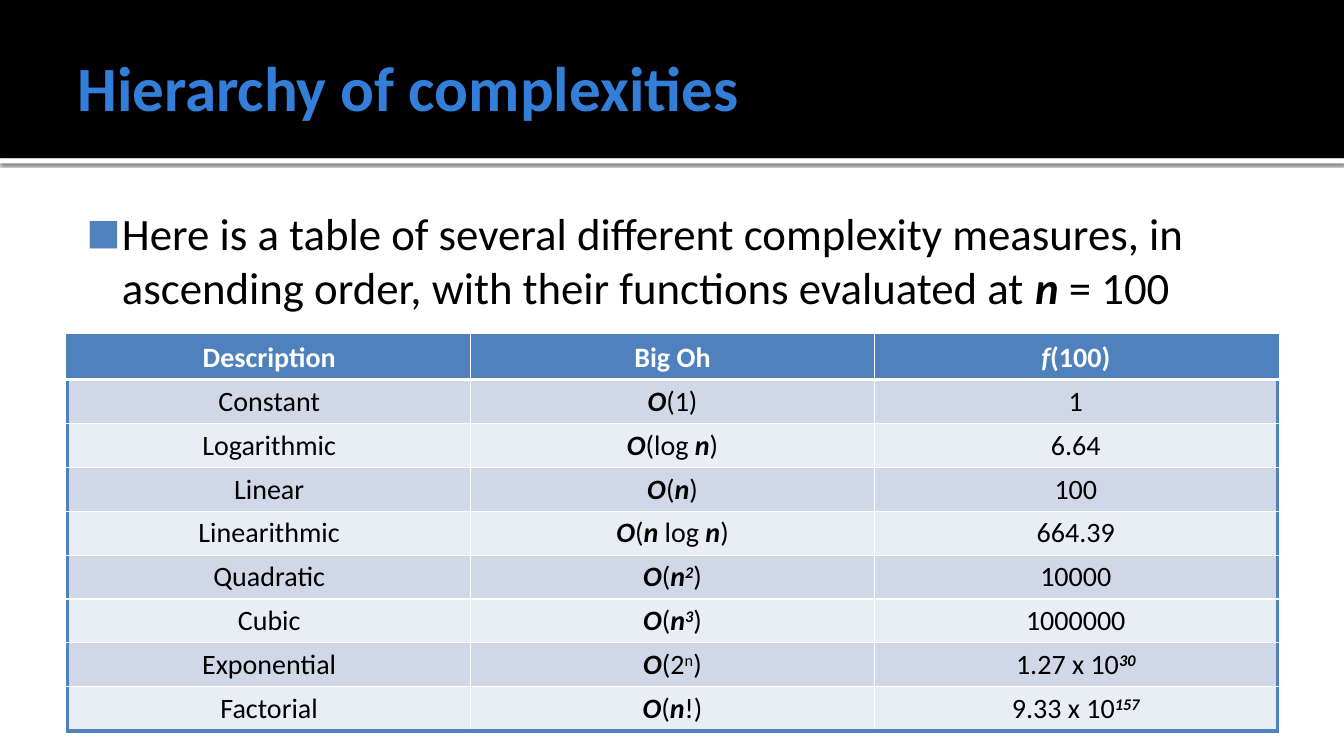
from dataclasses import dataclass

from lxml import etree
from pptx import Presentation
from pptx.dml.color import RGBColor
from pptx.enum.shapes import MSO_SHAPE
from pptx.enum.text import MSO_ANCHOR, PP_ALIGN
from pptx.oxml.ns import qn
from pptx.util import Inches, Pt

RECTANGLE = MSO_SHAPE.RECTANGLE
MIDDLE = MSO_ANCHOR.MIDDLE
CENTER = PP_ALIGN.CENTER

# *...* marks bold italic, ^...^ marks superscript
TITLE = "Hierarchy of complexities"
INTRO = ("Here is a table of several different complexity measures, in "
         "ascending order, with their functions evaluated at *n* = 100")
COMPLEXITIES = [
    ("Description", "Big Oh", "*f*(100)"),
    ("Constant", "*O*(1)", "1"),
    ("Logarithmic", "*O*(log *n*)", "6.64"),
    ("Linear", "*O*(*n*)", "100"),
    ("Linearithmic", "*O*(*n* log *n*)", "664.39"),
    ("Quadratic", "*O*(*n*^2^)", "10000"),
    ("Cubic", "*O*(*n*^3^)", "1000000"),
    ("Exponential", "*O*(2^*n*^)", "1.27 x 10^30^"),
    ("Factorial", "*O*(*n*!)", "9.33 x 10^157^"),
]


@dataclass(frozen=True)
class Theme:
    font: str = "Calibri"
    title_size: int = 45
    body_size: int = 32
    table_size: int = 20
    black: str = "000000"
    white: str = "FFFFFF"
    title: str = "337ED9"
    accent: str = "4F81BD"
    bands: tuple = ("E9EDF4", "D0D8E8")
    thin: int = 1
    thick: int = 3


THEME = Theme()
WIDTH, HEIGHT = 13.33, 7.5
MARGIN = 0.67
CONTENT_WIDTH = 12
HEADER_HEIGHT = 1.57
STRIP_HEIGHT = 0.05
TABLE_TOP, TABLE_HEIGHT = 3.33, 3.92


def add_xml(parent, tag, **attributes):
    return etree.SubElement(parent, qn(tag), attributes)


def add_color(parent, color):
    return add_xml(add_xml(parent, "a:solidFill"), "a:srgbClr", val=color)


def add_band(slide, top, height, color):
    band = slide.shapes.add_shape(
        RECTANGLE, 0, Inches(top), Inches(WIDTH), Inches(height))
    band.shadow.inherit = False
    band.fill.solid()
    band.fill.fore_color.rgb = RGBColor.from_string(color)
    band.line.fill.background()
    return band


def add_shadow(shape):
    effects = shape._element.spPr.find(qn("a:effectLst"))
    shadow = add_xml(effects, "a:outerShdw", blurRad=str(Pt(2.5)),
                     dist=str(Pt(0.8)), dir="5400000", rotWithShape="0")
    color = add_xml(shadow, "a:srgbClr", val=THEME.black)
    add_xml(color, "a:alpha", val="60000")


def write_marked(paragraph, text, size, color, bold=False):
    """Turn * and ^ marks into bold italic and superscript runs."""
    emphasis = superscript = False
    for index, part in enumerate(text.replace("^", "*^*").split("*")):
        if part == "^":
            superscript = not superscript
            emphasis = not emphasis
        emphasis = emphasis if index == 0 else not emphasis
        if part in ("", "^"):
            continue
        run = paragraph.add_run()
        run.text = part
        run.font.name = THEME.font
        run.font.size = Pt(size)
        run.font.color.rgb = RGBColor.from_string(color)
        run.font.bold = bold or emphasis
        run.font.italic = emphasis
        if superscript:
            run.font._element.set("baseline", "30000")


def add_text(slide, top, height, insets):
    box = slide.shapes.add_textbox(
        Inches(MARGIN), Inches(top), Inches(CONTENT_WIDTH), Inches(height))
    frame = box.text_frame
    frame.word_wrap = True
    (frame.margin_left, frame.margin_top,
     frame.margin_right, frame.margin_bottom) = map(Inches, insets)
    return frame


def add_bullet(paragraph):
    properties = paragraph._p.get_or_add_pPr()
    properties.set("marL", str(Inches(0.48)))
    properties.set("indent", str(Inches(-0.35)))
    add_xml(add_xml(properties, "a:buClr"), "a:srgbClr", val=THEME.accent)
    add_xml(properties, "a:buSzPct", val="80000")
    add_xml(properties, "a:buFont", typeface=THEME.font)
    add_xml(properties, "a:buChar", char="■")


def set_borders(cell, borders):
    """Put the (color, width) of each side ahead of the cell's fill."""
    properties = cell._tc.get_or_add_tcPr()
    for position, (side, (color, width)) in enumerate(borders.items()):
        line = add_xml(properties, f"a:ln{side}", w=str(Pt(width)))
        add_color(line, color)
        properties.insert(position, line)


def add_complexity_table(slide):
    row_count, column_count = len(COMPLEXITIES), len(COMPLEXITIES[0])
    table = slide.shapes.add_table(
        row_count, column_count, Inches(MARGIN), Inches(TABLE_TOP),
        Inches(CONTENT_WIDTH), Inches(TABLE_HEIGHT)).table
    outer = (THEME.accent, THEME.thick)
    inner = (THEME.white, THEME.thin)
    rule = (THEME.white, THEME.thick)
    for row, texts in enumerate(COMPLEXITIES):
        header = row == 0
        last_row = row == row_count - 1
        for column, text in enumerate(texts):
            cell = table.cell(row, column)
            cell.fill.solid()
            cell.fill.fore_color.rgb = RGBColor.from_string(
                THEME.accent if header else THEME.bands[row % 2])
            paragraph = cell.text_frame.paragraphs[0]
            paragraph.alignment = CENTER
            write_marked(paragraph, text, THEME.table_size,
                         THEME.white if header else THEME.black, header)
            set_borders(cell, {
                "L": outer if column == 0 else inner,
                "R": outer if column == column_count - 1 else inner,
                "T": outer if header else rule if row == 1 else inner,
                "B": rule if header else outer if last_row else inner,
            })


def main():
    presentation = Presentation()
    presentation.slide_width = Inches(WIDTH)
    presentation.slide_height = Inches(HEIGHT)
    slide = presentation.slides.add_slide(presentation.slide_layouts[6])

    add_shadow(add_band(slide, HEADER_HEIGHT, STRIP_HEIGHT, THEME.white))
    add_band(slide, 0, HEADER_HEIGHT, THEME.black)

    title = add_text(slide, 0.17, 1.37, (0.1, 0.05, 0.05, 0.05))
    title.vertical_anchor = MIDDLE
    write_marked(title.paragraphs[0], TITLE, THEME.title_size,
                 THEME.title, bold=True)

    intro = add_text(slide, 1.94, 1.39, (0.06, 0.1, 0.1, 0.05))
    add_bullet(intro.paragraphs[0])
    write_marked(intro.paragraphs[0], INTRO, THEME.body_size, THEME.black)

    add_complexity_table(slide)
    presentation.save("out.pptx")


if __name__ == "__main__":
    main()
